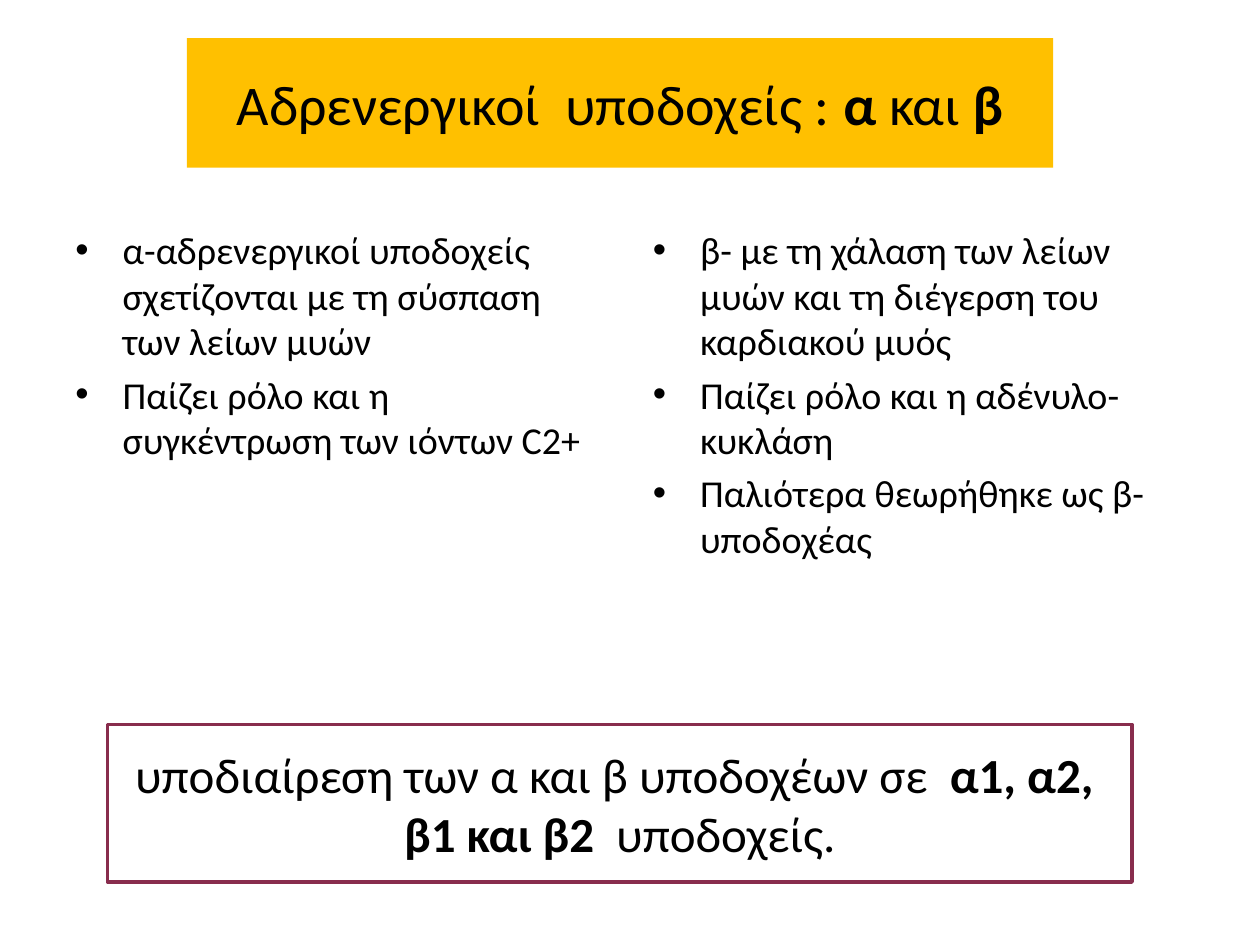
from lxml import etree
from pptx import Presentation
from pptx.dml.color import RGBColor
from pptx.enum import shapes, text
from pptx.oxml import ns
from pptx.util import Pt

BLACK = RGBColor(0x00, 0x00, 0x00)
WHITE = RGBColor(0xFF, 0xFF, 0xFF)
AMBER = RGBColor(0xFF, 0xC0, 0x00)
PLUM = RGBColor(0x88, 0x2D, 0x4D)
FONT = "Calibri"

TITLE = [("Αδρενεργικοί  υποδοχείς : ", False), ("α", True),
         (" και ", False), ("β", True)]
ALPHA = ["α-αδρενεργικοί υποδοχείς σχετίζονται με τη σύσπαση των λείων μυών",
         "Παίζει ρόλο και η συγκέντρωση των ιόντων C2+"]
BETA = ["β- με τη χάλαση των λείων μυών και τη διέγερση του καρδιακού μυός",
        "Παίζει ρόλο και η αδένυλο-κυκλάση",
        "Παλιότερα θεωρήθηκε ως β-υποδοχέας"]
SUBTYPES = [("υποδιαίρεση των α και β υποδοχέων σε  ", False),
            ("α1, α2,  β1 και β2", True), ("  υποδοχείς.", False)]


def add_run(p, content, size, bold=False, color=BLACK):
    r = p.add_run()
    r.text = content
    r.font.name = FONT
    r.font.size = Pt(size)
    r.font.bold = bold
    r.font.color.rgb = color


def set_bullet(p, indent=27):
    pPr = p._p.get_or_add_pPr()
    pPr.set("marL", str(Pt(indent)))
    pPr.set("indent", str(-Pt(indent)))
    etree.SubElement(pPr, ns.qn("a:buFont"), typeface="Arial")
    etree.SubElement(pPr, ns.qn("a:buChar"), char="•")


def add_panel(s, box, runs, size, fill, line=None):
    """Filled rectangle with one centred paragraph of (text, bold) runs."""
    sp = s.shapes.add_shape(shapes.MSO_SHAPE.RECTANGLE, *map(Pt, box))
    sp.shadow.inherit = False
    sp.fill.solid()
    sp.fill.fore_color.rgb = fill
    if line is None:
        sp.line.fill.background()
    else:
        sp.line.color.rgb = line
        sp.line.width = Pt(2)
    tf = sp.text_frame
    tf.word_wrap = True
    tf.vertical_anchor = text.MSO_ANCHOR.MIDDLE
    p = tf.paragraphs[0]
    p.alignment = text.PP_ALIGN.CENTER
    for content, bold in runs:
        add_run(p, content, size, bold=bold)


def add_bullets(s, box, items, size=21.7):
    tf = s.shapes.add_textbox(*map(Pt, box)).text_frame
    tf.word_wrap = True
    for i, item in enumerate(items):
        p = tf.add_paragraph() if i else tf.paragraphs[0]
        p.space_before = Pt(0.2 * size)
        set_bullet(p)
        add_run(p, item, size)


def main():
    prs = Presentation()
    prs.slide_width, prs.slide_height = Pt(720), Pt(540)
    s = prs.slides.add_slide(prs.slide_layouts[6])

    # Title band
    add_panel(s, (106.8, 21.8, 495, 74), TITLE, 32, AMBER)

    # Two columns of receptor properties
    add_bullets(s, (36, 126, 318, 356.4), ALPHA)
    add_bullets(s, (366, 126, 318, 166.3), BETA)

    # Framed conclusion
    add_panel(s, (61.5, 414, 585.4, 90), SUBTYPES, 28, WHITE, line=PLUM)

    prs.save("out.pptx")


if __name__ == "__main__":
    main()
